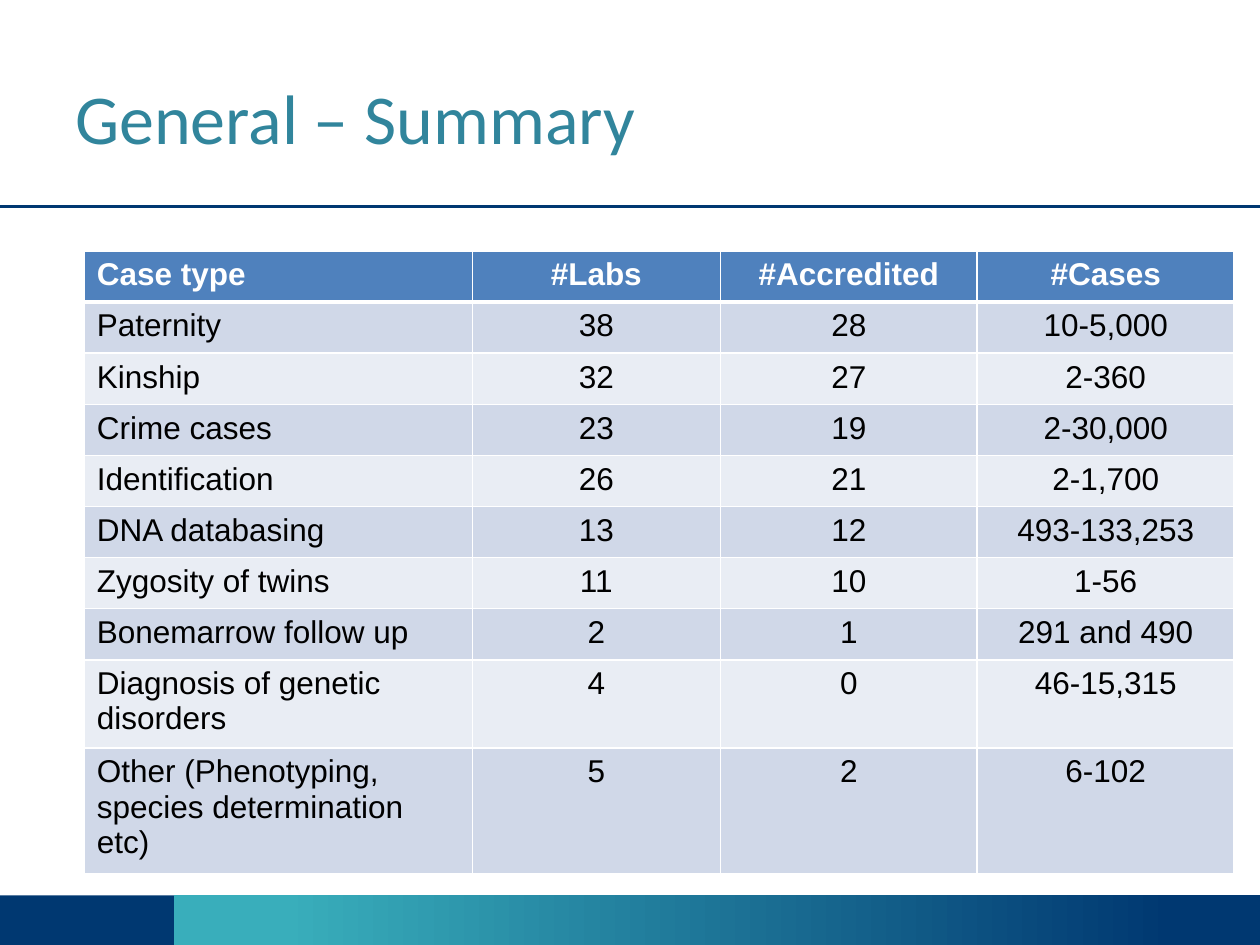
from dataclasses import dataclass

from lxml import etree
from pptx import Presentation
from pptx.dml.color import RGBColor
from pptx.enum.shapes import MSO_CONNECTOR, MSO_SHAPE
from pptx.enum.text import MSO_ANCHOR, PP_ALIGN
from pptx.oxml.ns import qn
from pptx.util import Cm, Pt

RECTANGLE = MSO_SHAPE.RECTANGLE
STRAIGHT = MSO_CONNECTOR.STRAIGHT
MIDDLE = MSO_ANCHOR.MIDDLE
LEFT, CENTER = PP_ALIGN.LEFT, PP_ALIGN.CENTER


@dataclass(frozen=True)
class Theme:
    navy: str = "003871"
    teal: str = "39AEBB"
    title: str = "31859C"
    header: str = "4F81BD"
    bands: tuple[str, str] = ("D0D8E8", "E9EDF4")
    white: str = "FFFFFF"
    black: str = "000000"
    title_font: str = "Calibri"
    body_font: str = "Arial"
    title_size: int = 40
    body_size: int = 18


@dataclass(frozen=True)
class Band:
    left: float
    width: float
    colors: tuple[str, ...]


@dataclass(frozen=True)
class CaseRow:
    case_type: str
    labs: str
    accredited: str
    cases: str
    height: float = 1.03

    def values(self) -> tuple[str, ...]:
        return self.case_type, self.labs, self.accredited, self.cases


THEME = Theme()
PAGE_WIDTH, PAGE_HEIGHT = 25.4, 19.05
FOOTER_TOP, FOOTER_SPLIT = 18.05, 3.51
RULE_TOP = 4.16
GRADIENT_STOPS = (0.10, 0.92)
COLUMN_WIDTHS = (7.82, 5.0, 5.18, 5.18)

FOOTER = (
    Band(0, FOOTER_SPLIT, (THEME.navy,)),
    Band(FOOTER_SPLIT, PAGE_WIDTH - FOOTER_SPLIT, (THEME.teal, THEME.navy)),
)
ROWS = (
    CaseRow("Case type", "#Labs", "#Accredited", "#Cases"),
    CaseRow("Paternity", "38", "28", "10-5,000"),
    CaseRow("Kinship", "32", "27", "2-360"),
    CaseRow("Crime cases", "23", "19", "2-30,000"),
    CaseRow("Identification", "26", "21", "2-1,700"),
    CaseRow("DNA databasing", "13", "12", "493-133,253"),
    CaseRow("Zygosity of twins", "11", "10", "1-56"),
    CaseRow("Bonemarrow follow up", "2", "1", "291 and 490"),
    CaseRow("Diagnosis of genetic disorders", "4", "0", "46-15,315", 1.78),
    CaseRow("Other (Phenotyping, species determination etc)", "5", "2", "6-102", 2.54),
)


def style_text(para, font: str, size: int, color: str, bold: bool = False) -> None:
    for span in para.runs:
        span.font.name = font
        span.font.size = Pt(size)
        span.font.bold = bold
        span.font.color.rgb = RGBColor.from_string(color)


def draw_band(page, band: Band) -> None:
    bar = page.shapes.add_shape(
        RECTANGLE, Cm(band.left), Cm(FOOTER_TOP), Cm(band.width), Cm(PAGE_HEIGHT - FOOTER_TOP)
    )
    bar.shadow.inherit = False
    bar.line.fill.background()
    if len(band.colors) == 1:
        bar.fill.solid()
        bar.fill.fore_color.rgb = RGBColor.from_string(band.colors[0])
        return
    bar.fill.gradient()
    bar.fill.gradient_angle = 0
    for stop, position, color in zip(bar.fill.gradient_stops, GRADIENT_STOPS, band.colors):
        stop.position = position
        stop.color.rgb = RGBColor.from_string(color)


def draw_rule(page) -> None:
    rule = page.shapes.add_connector(STRAIGHT, Cm(0), Cm(RULE_TOP), Cm(PAGE_WIDTH), Cm(RULE_TOP))
    rule.line.color.rgb = RGBColor.from_string(THEME.navy)
    rule.line.width = Pt(2)
    etree.SubElement(rule._element.spPr, qn("a:effectLst"))


def draw_title(page, text: str) -> None:
    box = page.shapes.add_textbox(Cm(1.27), Cm(0.76), Cm(22.86), Cm(3.18))
    frame = box.text_frame
    frame.word_wrap = True
    frame.vertical_anchor = MIDDLE
    frame.text = text
    style_text(frame.paragraphs[0], THEME.title_font, THEME.title_size, THEME.title)


def set_borders(cell, widths: dict[str, int]) -> None:
    properties = cell._tc.get_or_add_tcPr()
    for index, (side, width) in enumerate(widths.items()):
        border = etree.Element(qn(f"a:{side}"), w=str(Pt(width)))
        fill = etree.SubElement(border, qn("a:solidFill"))
        etree.SubElement(fill, qn("a:srgbClr"), val=THEME.white)
        properties.insert(index, border)


def draw_table(page, rows: tuple[CaseRow, ...]) -> None:
    table = page.shapes.add_table(
        len(rows), len(COLUMN_WIDTHS), Cm(1.7), Cm(5.06),
        Cm(sum(COLUMN_WIDTHS)), Cm(sum(row.height for row in rows)),
    ).table
    for column, width in zip(table.columns, COLUMN_WIDTHS):
        column.width = Cm(width)
    for row_index, row in enumerate(rows):
        table.rows[row_index].height = Cm(row.height)
        is_header = row_index == 0
        fill = THEME.header if is_header else THEME.bands[(row_index - 1) % 2]
        color = THEME.white if is_header else THEME.black
        top = 3 if row_index == 1 else 1
        bottom = 3 if is_header else 1
        for column_index, value in enumerate(row.values()):
            cell = table.cell(row_index, column_index)
            cell.fill.solid()
            cell.fill.fore_color.rgb = RGBColor.from_string(fill)
            set_borders(cell, {"lnL": 1, "lnR": 1, "lnT": top, "lnB": bottom})
            cell.text_frame.text = value
            para = cell.text_frame.paragraphs[0]
            para.alignment = CENTER if column_index else LEFT
            style_text(para, THEME.body_font, THEME.body_size, color, is_header)


def main() -> None:
    deck = Presentation()
    deck.slide_width, deck.slide_height = Cm(PAGE_WIDTH), Cm(PAGE_HEIGHT)
    page = deck.slides.add_slide(deck.slide_layouts[6])
    for band in FOOTER:
        draw_band(page, band)
    draw_rule(page)
    draw_title(page, "General – Summary")
    draw_table(page, ROWS)
    deck.save("out.pptx")


if __name__ == "__main__":
    main()
